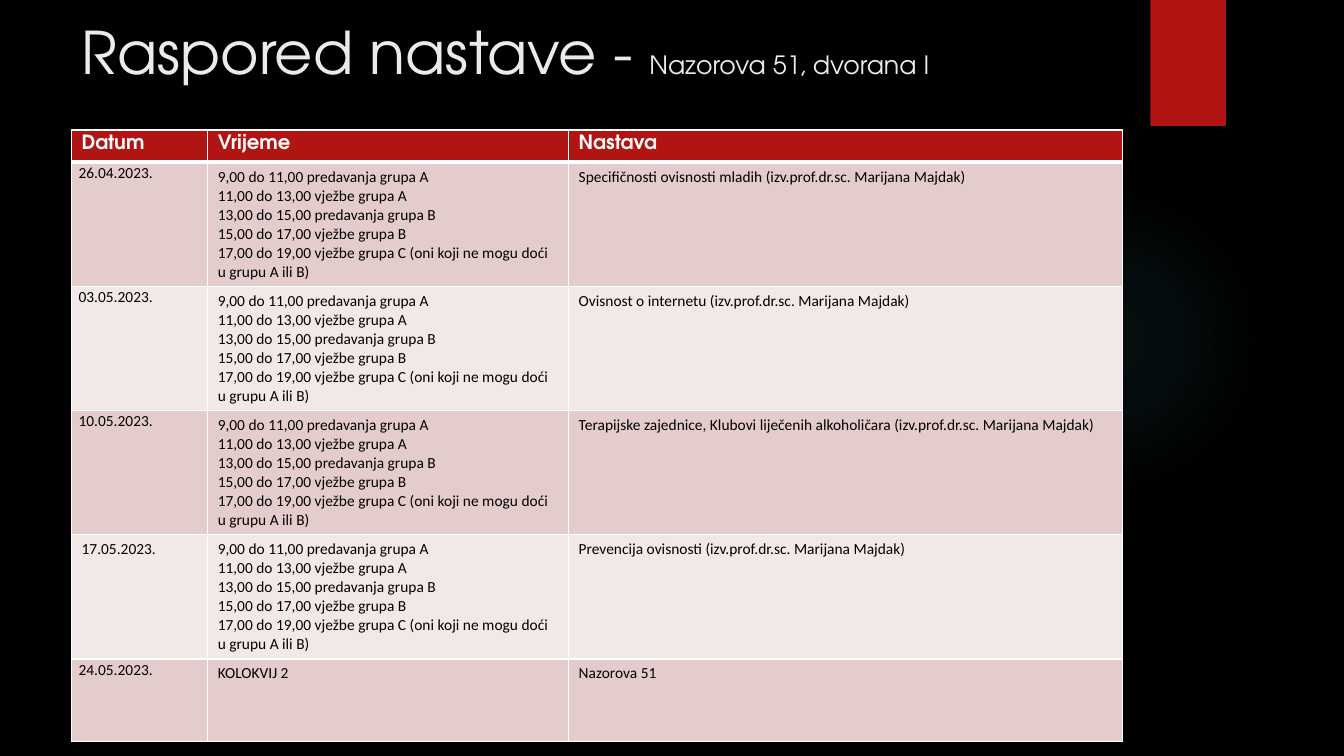
from dataclasses import dataclass

from lxml import etree
from pptx import Presentation
from pptx.dml.color import RGBColor
from pptx.enum.shapes import MSO_SHAPE
from pptx.enum.text import MSO_ANCHOR, PP_ALIGN
from pptx.oxml import parse_xml
from pptx.oxml.ns import nsdecls, qn
from pptx.util import Inches, Pt

ELLIPSE, RECTANGLE = MSO_SHAPE.OVAL, MSO_SHAPE.RECTANGLE
MIDDLE, TOP, LEFT = MSO_ANCHOR.MIDDLE, MSO_ANCHOR.TOP, PP_ALIGN.LEFT


@dataclass(frozen=True)
class Theme:
    background: str = "000000"
    glow: str = "50B9C1"
    accent: str = "B01513"
    title: str = "EBEBEB"
    header: str = "FFFFFF"
    body: str = "000000"
    border: str = "FFFFFF"
    bands: tuple = ("E4CCCC", "F2E8E7")
    display_font: str = "TeX Gyre Adventor"
    body_font: str = "Calibri"
    title_size: float = 42
    subtitle_size: float = 18
    header_size: float = 14
    body_size: float = 11


THEME = Theme()

HEADINGS = ("Datum", "Vrijeme", "Nastava")
HOURS = (
    "9,00 do 11,00 predavanja grupa A",
    "11,00 do 13,00 vježbe grupa A",
    "13,00 do 15,00 predavanja grupa B",
    "15,00 do 17,00 vježbe grupa B",
    "17,00 do 19,00 vježbe grupa C (oni koji ne mogu doći u grupu A ili B)",
)
LECTURER = "(izv.prof.dr.sc. Marijana Majdak)"
SESSIONS = (
    ("26.04.2023.", HOURS, f"Specifičnosti ovisnosti mladih {LECTURER}"),
    ("03.05.2023.", HOURS, f"Ovisnost o internetu {LECTURER}"),
    ("10.05.2023.", HOURS, f"Terapijske zajednice, Klubovi liječenih alkoholičara {LECTURER}"),
    ("17.05.2023.", HOURS, f"Prevencija ovisnosti {LECTURER}"),
    ("24.05.2023.", ("KOLOKVIJ 2",), "Nazorova 51"),
)
WIDE_INSET_DATE = "17.05.2023."
COLUMN_WIDTHS = (1.35, 3.58, 5.49)
ROW_HEIGHTS = (0.32, 1.16, 1.16, 1.16, 1.16, 0.82)


def rgb(color):
    return RGBColor.from_string(color)


def add_run(paragraph, text, font, size, color, bold=False):
    run = paragraph.add_run()
    run.text = text
    run.font.name = font
    run.font.size = Pt(size)
    run.font.bold = bold
    run.font.color.rgb = rgb(color)


def add_decoration(slide, preset, box):
    decoration = slide.shapes.add_shape(preset, *map(Inches, box))
    decoration.shadow.inherit = False
    decoration.line.fill.background()
    return decoration


def add_glow(slide, box):
    glow = add_decoration(slide, ELLIPSE, box)
    stops = "".join(
        f'<a:gs pos="{position * 1000}"><a:srgbClr val="{THEME.glow}">'
        f'<a:alpha val="{alpha * 1000}"/></a:srgbClr></a:gs>'
        for position, alpha in ((0, 7), (36, 6), (69, 0))
    )
    gradient = parse_xml(
        f'<a:gradFill {nsdecls("a")}><a:gsLst>{stops}</a:gsLst><a:path path="circle">'
        '<a:fillToRect l="50000" t="50000" r="50000" b="50000"/></a:path></a:gradFill>'
    )
    glow.element.spPr.find(qn("a:prstGeom")).addnext(gradient)


def add_ribbon(slide, box):
    ribbon = add_decoration(slide, RECTANGLE, box)
    ribbon.fill.solid()
    ribbon.fill.fore_color.rgb = rgb(THEME.accent)
    effects = ribbon.element.spPr.find(qn("a:effectLst"))
    effects.append(parse_xml(
        f'<a:outerShdw {nsdecls("a")} blurRad="{Pt(3)}" dist="{Pt(2)}" dir="5400000" '
        'rotWithShape="0"><a:srgbClr val="000000"><a:alpha val="45000"/></a:srgbClr></a:outerShdw>'
    ))


def fill_title(slide, box):
    title = slide.shapes.title
    title.left, title.top, title.width, title.height = map(Inches, box)
    frame = title.text_frame
    frame.word_wrap = True
    frame.vertical_anchor = MIDDLE
    heading = frame.paragraphs[0]
    heading.alignment = LEFT
    add_run(heading, "Raspored nastave - ", THEME.display_font, THEME.title_size, THEME.title)
    add_run(heading, "Nazorova 51, dvorana I", THEME.display_font, THEME.subtitle_size, THEME.title)


def set_borders(cell, top, bottom):
    properties = cell._tc.get_or_add_tcPr()
    widths = {"lnL": 1, "lnR": 1, "lnT": top, "lnB": bottom}
    for index, (side, width) in enumerate(widths.items()):
        border = etree.Element(qn(f"a:{side}"), w=str(Pt(width)))
        solid = etree.SubElement(border, qn("a:solidFill"))
        etree.SubElement(solid, qn("a:srgbClr"), val=THEME.border)
        properties.insert(index, border)


def fill_cell(cell, lines, fill, font, size, color, bold=False, spacing=None):
    cell.fill.solid()
    cell.fill.fore_color.rgb = rgb(fill)
    cell.vertical_anchor = TOP
    frame = cell.text_frame
    for index, line in enumerate(lines):
        paragraph = frame.add_paragraph() if index else frame.paragraphs[0]
        paragraph.alignment = LEFT
        if spacing:
            paragraph.line_spacing = spacing
        add_run(paragraph, line, font, size, color, bold)


def add_schedule(slide, box):
    frame = slide.shapes.add_table(len(ROW_HEIGHTS), len(COLUMN_WIDTHS), *map(Inches, box))
    schedule = frame.table
    for column, width in zip(schedule.columns, COLUMN_WIDTHS):
        column.width = Inches(width)
    for row, height in zip(schedule.rows, ROW_HEIGHTS):
        row.height = Inches(height)

    for cell, heading in zip(schedule.rows[0].cells, HEADINGS):
        fill_cell(cell, (heading,), THEME.accent, THEME.display_font,
                  THEME.header_size, THEME.header, bold=True)
        cell.margin_top = cell.margin_bottom = Inches(0.05)
        set_borders(cell, top=1, bottom=3)

    for number, (date, hours, topic) in enumerate(SESSIONS):
        cells = schedule.rows[number + 1].cells
        compact = date != WIDE_INSET_DATE
        for column, (cell, lines) in enumerate(zip(cells, ((date,), hours, (topic,)))):
            compact_date = compact and column == 0
            fill_cell(cell, lines, THEME.bands[number % 2], THEME.body_font, THEME.body_size,
                      THEME.body, spacing=1.07 if compact_date else None)
            if compact_date:
                cell.margin_left = cell.margin_right = Inches(0.07)
                cell.margin_top = cell.margin_bottom = 0
            set_borders(cell, top=1 if number else 3, bottom=1)


def build_schedule_slide(presentation):
    slide = presentation.slides.add_slide(presentation.slide_layouts[5])
    slide.background.fill.solid()
    slide.background.fill.fore_color.rgb = rgb(THEME.background)
    add_glow(slide, (9.41, 1.83, 3.08, 3.08))
    add_ribbon(slide, (11.41, 0, 0.75, 1.25))
    fill_title(slide, (0.71, 0.12, 10.29, 0.77))
    add_schedule(slide, (0.71, 1.29, sum(COLUMN_WIDTHS), sum(ROW_HEIGHTS)))


def main():
    presentation = Presentation()
    presentation.slide_width = Inches(13.33)
    presentation.slide_height = Inches(7.5)
    build_schedule_slide(presentation)
    presentation.save("out.pptx")


if __name__ == "__main__":
    main()
